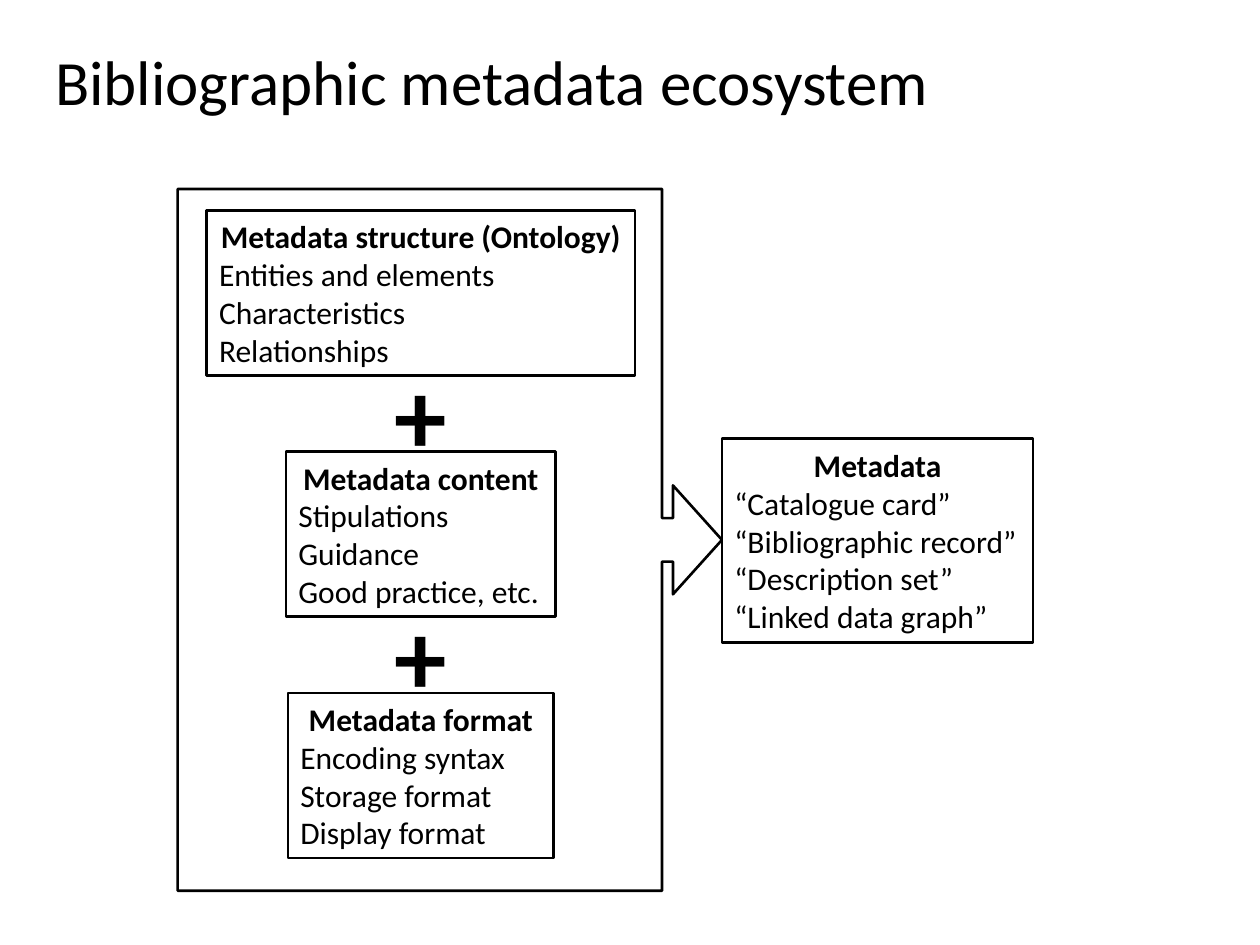
from dataclasses import dataclass

from pptx import Presentation
from pptx.dml.color import RGBColor
from pptx.enum.shapes import MSO_SHAPE
from pptx.enum.text import MSO_ANCHOR, MSO_AUTO_SIZE, PP_ALIGN
from pptx.util import Inches, Pt

BLACK = RGBColor(0x00, 0x00, 0x00)
FONT = "Calibri"
RECT, CALLOUT = MSO_SHAPE.RECTANGLE, MSO_SHAPE.RIGHT_ARROW_CALLOUT
LEFT, CENTER = PP_ALIGN.LEFT, PP_ALIGN.CENTER
FIT_SHAPE = MSO_AUTO_SIZE.SHAPE_TO_FIT_TEXT
MIDDLE = MSO_ANCHOR.MIDDLE

# Stack of metadata parts, in inches
STACK_CENTER = 3.34
STACK_TOP, STACK_BOTTOM_BOX = 1.67, 5.5
BOX_HEIGHT = 1.31
PLUS_WIDTH, PLUS_HEIGHT = 0.62, 1.11
PLUS_RISE = 0.86  # from the top of a plus sign to the top of the box below


@dataclass
class Box:
    heading: str
    items: list[str]
    width: float


PARTS = [
    Box("Metadata structure (Ontology)",
        ["Entities and elements", "Characteristics", "Relationships"], 3.4),
    Box("Metadata content",
        ["Stipulations", "Guidance", "Good practice, etc."], 2.14),
    Box("Metadata format",
        ["Encoding syntax", "Storage format", "Display format"], 2.11),
]
RESULT = Box("Metadata", ["“Catalogue card”", "“Bibliographic record”",
                          "“Description set”", "“Linked data graph”"], 2.47)


def style_run(p, size: float, bold: bool) -> None:
    font = p.runs[0].font
    font.name, font.size, font.bold = FONT, Pt(size), bold
    font.color.rgb = BLACK


def add_outline(slide, kind, left: float, top: float, width: float, height: float):
    sp = slide.shapes.add_shape(kind, Inches(left), Inches(top),
                                Inches(width), Inches(height))
    sp.shadow.inherit = False
    sp.fill.background()
    sp.line.color.rgb = BLACK
    sp.line.width = Pt(1.5)
    return sp


def add_box(slide, box: Box, left: float, top: float, height: float) -> None:
    tf = add_outline(slide, RECT, left, top, box.width, height).text_frame
    tf.word_wrap = False
    tf.auto_size = FIT_SHAPE
    tf.vertical_anchor = MIDDLE
    tf.text = "\n".join([box.heading, *box.items])
    for i, p in enumerate(tf.paragraphs):
        p.alignment = LEFT if i else CENTER
        style_run(p, 18, bold=i == 0)


def add_text(slide, text: str, left: float, top: float, width: float,
             height: float, size: float, bold: bool = False) -> None:
    tf = slide.shapes.add_textbox(Inches(left), Inches(top),
                                  Inches(width), Inches(height)).text_frame
    tf.word_wrap = False
    tf.auto_size = FIT_SHAPE
    tf.text = text
    style_run(tf.paragraphs[0], size, bold)


def main() -> None:
    prs = Presentation()
    prs.slide_width, prs.slide_height = Inches(10), Inches(7.5)
    slide = prs.slides.add_slide(prs.slide_layouts[6])

    # Title
    add_text(slide, "Bibliographic metadata ecosystem", 0.34, 0.29, 7.2, 0.71, 36)

    # Parts, joined by plus signs
    pitch = (STACK_BOTTOM_BOX - STACK_TOP) / (len(PARTS) - 1)
    for i, part in enumerate(PARTS):
        top = STACK_TOP + i * pitch
        add_box(slide, part, STACK_CENTER - part.width / 2, top, BOX_HEIGHT)
        if i:
            add_text(slide, "+", STACK_CENTER - PLUS_WIDTH / 2, top - PLUS_RISE,
                     PLUS_WIDTH, PLUS_HEIGHT, 60, bold=True)

    # Resulting metadata
    add_box(slide, RESULT, 5.73, 3.48, 1.62)

    # Frame around the parts, pointing to the result
    frame = add_outline(slide, CALLOUT, 1.41, 1.5, 4.32, 5.57)
    for i, value in enumerate([0.08, 0.1, 0.09, 0.89]):
        frame.adjustments[i] = value

    prs.save("out.pptx")


if __name__ == "__main__":
    main()
